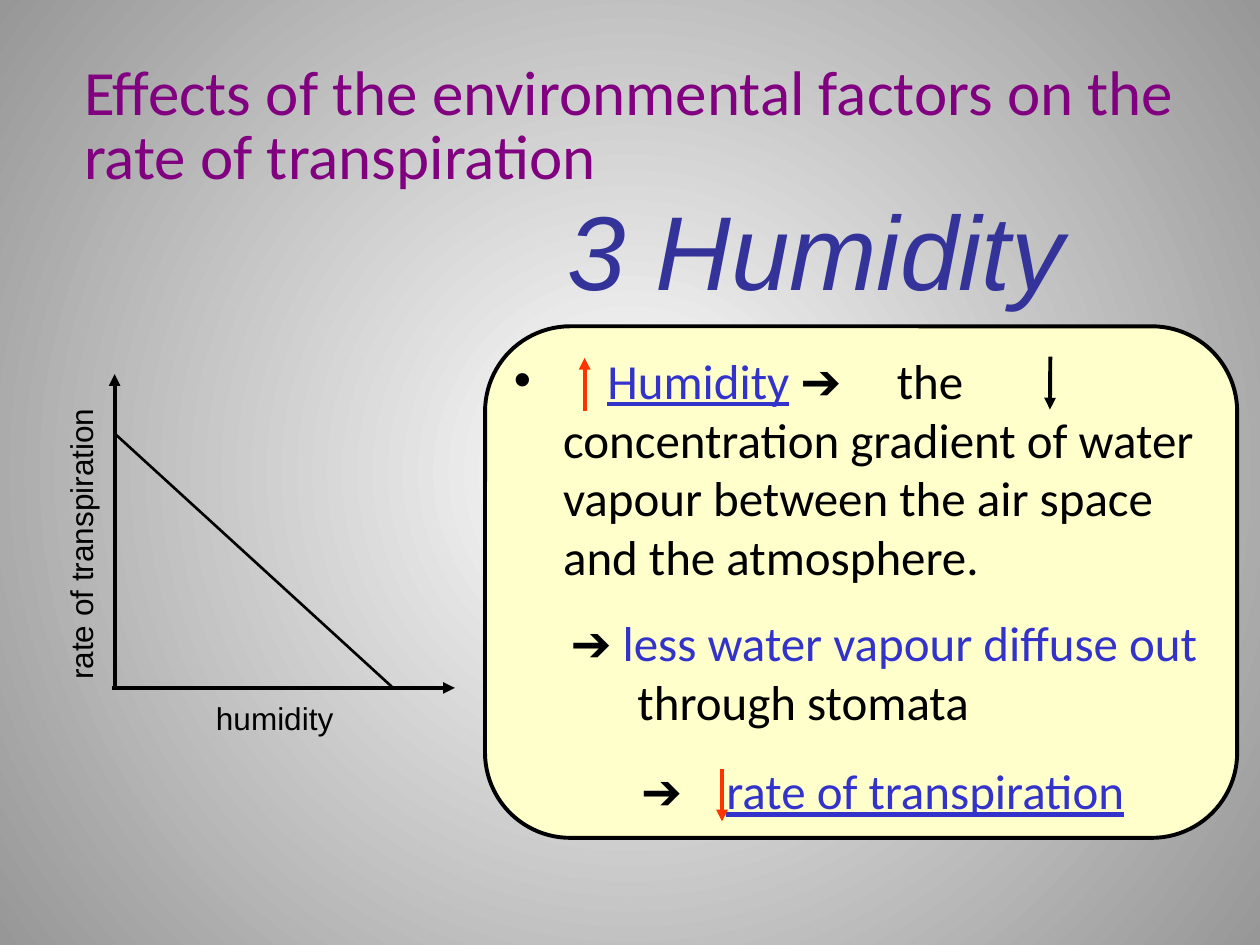
from lxml import etree
from pptx import Presentation
from pptx import oxml
from pptx import util as u
from pptx.dml import color
from pptx.enum import shapes, text
from pptx.oxml import ns

COLORS = {"ink": "000000", "title": "800080", "heading": "333399", "accent": "3333CC",
          "change": "FF3300", "panel": "FFFFCC", "center": "FFFFFF", "edge": "979797"}

PANEL = (277.2, 186.5, 429.8, 292.3)

LABELS = [
    {"box": (313.9, 102.2, 301, 79.9), "font": "Arial", "size": 60, "align": "RIGHT",
     "italic": True, "runs": [("3 Humidity", "heading")]},
    {"box": (-46.1, 296.6, 184.3, 28.8), "font": "Arial", "size": 18, "align": "CENTER",
     "rotation": 270, "runs": [("rate of transpiration", "ink")]},
    {"box": (115.9, 396, 82.1, 28.8), "font": "Arial", "size": 18, "align": "CENTER",
     "runs": [("humidity", "ink")]},
]

PASSAGES = [
    {"box": (319, 346.3, 374.4, 74.2), "indent": 38.2,
     "runs": [("➔ ", "ink"), ("less water vapour diffuse out", "accent"),
              (" through stomata", "ink")]},
    {"box": (359.3, 431.3, 385.2, 41), "indent": 38.2,
     "runs": [("➔", "ink"), (" ", "ink", {"gap": 19}),
              ("rate of transpiration", "accent", {"underline": True})]},
    {"box": (286.6, 196.6, 410.4, 141.8), "indent": 28.1, "bullet": "•",
     "runs": [(" ", "accent", {"gap": 19}), ("Humidity", "accent", {"underline": True}),
              (" ", "accent"), ("➔", "ink"), (" ", "ink", {"gap": 25.3}), ("the", "ink"),
              (" ", "accent", {"underline": True}),
              ("concentration gradient of water vapour between the air space "
               "and the atmosphere.", "ink")]},
    {"box": (41, 33.1, 673.9, 80.6), "size": 36, "line_spacing": 0.85,
     "runs": [("Effects of the environmental factors on the rate of transpiration",
               "title")]},
]

LINES = [
    ((65.5, 393.8), (65.5, 213.8), "ink", 2.25, True),
    ((64.1, 393.1), (259.9, 393.1), "ink", 2.25, True),
    ((65.5, 247.7), (223.9, 392.4), "ink", 1.5, False),
    ((412.6, 439.2), (412.6, 469.4), "change", 2.25, True),
    ((334.1, 234.7), (334.1, 204.5), "change", 2.25, True),
    ((600.2, 203.8), (600, 234), "ink", 2.25, True),
]


def rgb(name):
    return color.RGBColor.from_string(COLORS[name])


def points(values):
    return [u.Pt(value) for value in values]


def paint_background(slide):
    background = oxml.parse_xml(
        f'<p:bg {ns.nsdecls("p", "a")}><p:bgPr><a:gradFill rotWithShape="1"><a:gsLst>'
        f'<a:gs pos="0"><a:srgbClr val="{COLORS["center"]}"/></a:gs>'
        f'<a:gs pos="100000"><a:srgbClr val="{COLORS["edge"]}"/></a:gs></a:gsLst>'
        '<a:path path="circle"><a:fillToRect l="50000" t="50000" r="50000" b="50000"/>'
        '</a:path></a:gradFill><a:effectLst/></p:bgPr></p:bg>')
    slide.element.cSld.insert(0, background)


def add_panel(slide):
    panel = slide.shapes.add_shape(
        shapes.MSO_SHAPE.FLOWCHART_ALTERNATE_PROCESS, *points(PANEL))
    panel.shadow.inherit = False
    panel.fill.solid()
    panel.fill.fore_color.rgb = rgb("panel")
    panel.line.color.rgb = rgb("ink")
    panel.line.width = u.Pt(2.25)


def add_text(slide, item, wrap):
    box = slide.shapes.add_textbox(*points(item["box"]))
    box.rotation = item.get("rotation", 0)
    frame = box.text_frame
    frame.word_wrap = wrap
    frame.auto_size = text.MSO_AUTO_SIZE.SHAPE_TO_FIT_TEXT
    paragraph = frame.paragraphs[0]
    paragraph.alignment = text.PP_ALIGN[item.get("align", "LEFT")]
    if "line_spacing" in item:
        paragraph.line_spacing = item["line_spacing"]
    properties = paragraph._p.get_or_add_pPr()
    if "indent" in item:
        indent = u.Pt(item["indent"])
        properties.set("marL", str(indent))
        properties.set("indent", str(-indent))
    if "bullet" in item:
        bullet_color = etree.SubElement(properties, ns.qn("a:buClr"))
        etree.SubElement(bullet_color, ns.qn("a:srgbClr"), val=COLORS["ink"])
        etree.SubElement(properties, ns.qn("a:buFont"), typeface="Arial")
        etree.SubElement(properties, ns.qn("a:buChar"), char=item["bullet"])
    for words, color_name, *options in item["runs"]:
        style = options[0] if options else {}
        run = paragraph.add_run()
        run.text = words
        run.font.name = item.get("font", "Calibri")
        run.font.size = u.Pt(item.get("size", 28))
        run.font.italic = item.get("italic", False)
        run.font.underline = style.get("underline", False)
        run.font.color.rgb = rgb(color_name)
        if "gap" in style:
            run._r.get_or_add_rPr().set("spc", str(round(style["gap"] * 100)))


def add_line(slide, start, end, color_name, width, arrow):
    line = slide.shapes.add_connector(
        shapes.MSO_CONNECTOR.STRAIGHT, *points(start + end))
    line.line.color.rgb = rgb(color_name)
    line.line.width = u.Pt(width)
    if arrow:
        etree.SubElement(line.line._get_or_add_ln(), ns.qn("a:tailEnd"), type="triangle")
    etree.SubElement(line._element.spPr, ns.qn("a:effectLst"))


def main():
    presentation = Presentation()
    presentation.slide_width, presentation.slide_height = points((720, 540))
    slide = presentation.slides.add_slide(presentation.slide_layouts[6])
    paint_background(slide)
    add_panel(slide)
    for label in LABELS:
        add_text(slide, label, wrap=False)
    for passage in PASSAGES:
        add_text(slide, passage, wrap=True)
    for line in LINES:
        add_line(slide, *line)
    presentation.save("out.pptx")


if __name__ == "__main__":
    main()
